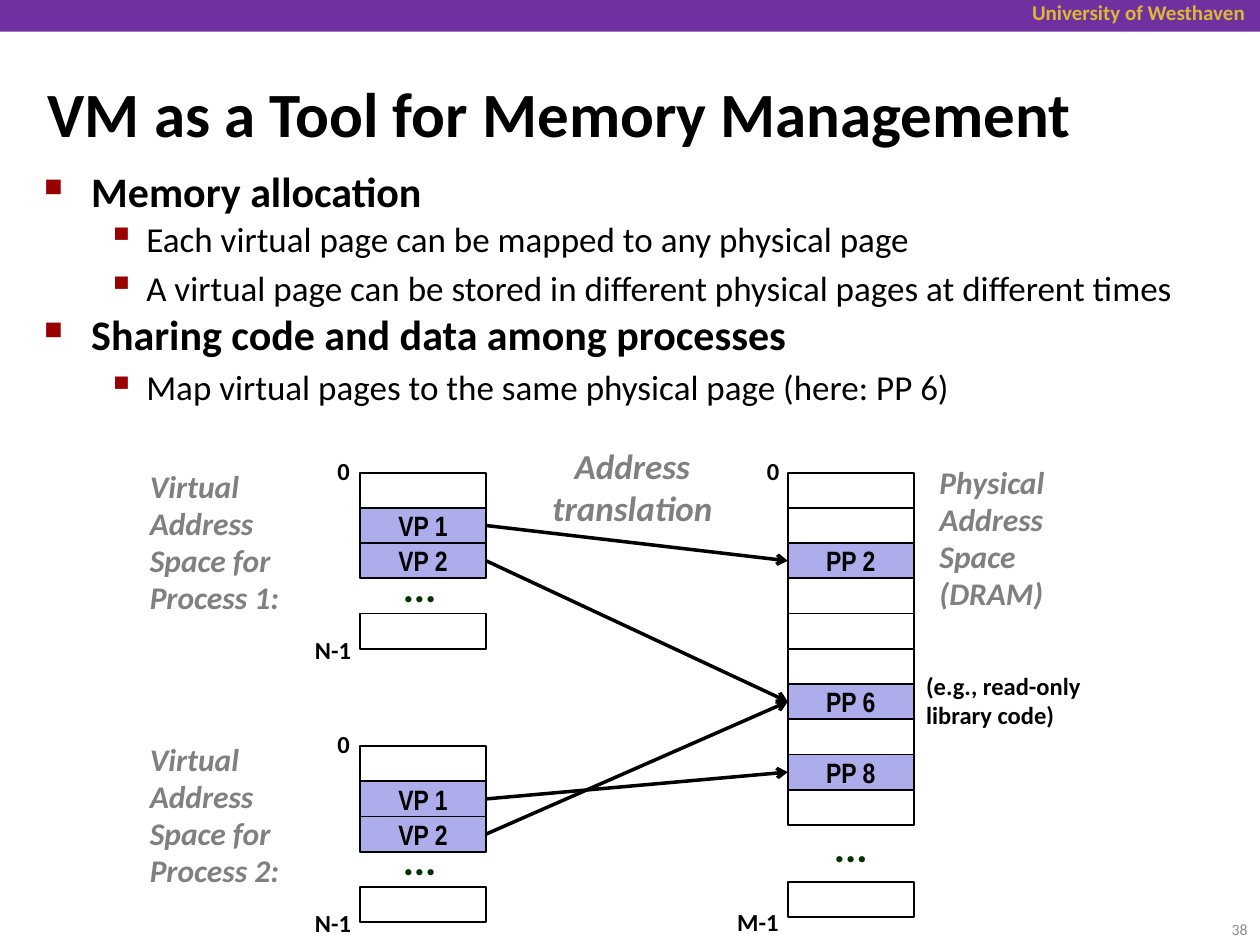
import lxml.etree
import pptx
import pptx.dml.color
import pptx.enum.shapes
import pptx.enum.text
import pptx.oxml.ns
import pptx.util

Cm = pptx.util.Cm
Pt = pptx.util.Pt
qn = pptx.oxml.ns.qn
ALIGN = pptx.enum.text.PP_ALIGN
RECTANGLE = pptx.enum.shapes.MSO_SHAPE.RECTANGLE
MIDDLE = pptx.enum.text.MSO_ANCHOR.MIDDLE

COLORS = {
    name: pptx.dml.color.RGBColor.from_string(value)
    for name, value in {
        "purple": "7030A0", "gold": "DCB834", "black": "000000", "gray": "808080",
        "number": "8C8C8C", "page": "ADADEB", "dots": "003300",
    }.items()
}
BULLET_COLOR = "990000"

presentation = pptx.Presentation()
presentation.slide_width = Cm(25.4)
presentation.slide_height = Cm(19.05)
slide = presentation.slides.add_slide(presentation.slide_layouts[6])
shapes = slide.shapes


def add_text(left, top, width, height, lines, size, color="black", bold=True, italic=False,
             align=ALIGN.LEFT, spacing=None, before=0, wrap=True, anchor=None):
    text_frame = shapes.add_textbox(Cm(left), Cm(top), Cm(width), Cm(height)).text_frame
    text_frame.word_wrap = wrap
    text_frame.vertical_anchor = anchor
    for index, line in enumerate(lines):
        paragraph = text_frame.add_paragraph() if index else text_frame.paragraphs[0]
        paragraph.alignment = align
        paragraph.line_spacing = spacing
        paragraph.space_before = Pt(before)
        run = paragraph.add_run()
        run.text = line
        run.font.name = "Calibri"
        run.font.size = Pt(size)
        run.font.bold = bold
        run.font.italic = italic
        run.font.color.rgb = COLORS[color]
    return text_frame


def add_page(left, top, label):
    """Draw one memory page; a page with a label is filled."""
    page = shapes.add_shape(RECTANGLE, Cm(left), Cm(top), Cm(PAGE_WIDTH), Cm(PAGE_HEIGHT))
    page.shadow.inherit = False
    page.line.color.rgb = COLORS["black"]
    page.line.width = Pt(1)
    if not label:
        page.fill.background()
        return
    page.fill.solid()
    page.fill.fore_color.rgb = COLORS["page"]
    page.text_frame.vertical_anchor = MIDDLE
    paragraph = page.text_frame.paragraphs[0]
    paragraph.alignment = ALIGN.CENTER
    run = paragraph.add_run()
    run.text = label
    run.font.name = "Arial Narrow"
    run.font.size = Pt(16)
    run.font.bold = True
    run.font.color.rgb = COLORS["black"]


# Header and title
header = shapes.add_shape(RECTANGLE, 0, 0, presentation.slide_width, Cm(0.64))
header.shadow.inherit = False
header.fill.solid()
header.fill.fore_color.rgb = COLORS["purple"]
header.line.fill.background()
add_text(18.62, -0.13, 6.73, 0.76, ["University of Westhaven"], 12, "gold", align=ALIGN.RIGHT)
add_text(0.71, 1.47, 23.93, 1.6, ["VM as a Tool for Memory Management"], 36, anchor=MIDDLE)

# Bulleted list: level, line spacing, text
points = [
    (0, 0.83, "Memory allocation"),
    (1, 0.88, "Each virtual page can be mapped to any physical page"),
    (1, 1.0, "A virtual page can be stored in different physical pages at different times"),
    (0, 0.83, "Sharing code and data among processes"),
    (1, 1.0, "Map virtual pages to the same physical page (here: PP 6)"),
]
# Per level: text size, margin, hanging indent, bullet, bullet size in percent
levels = [(24, 0.95, 0.95, "■", 60), (20, 2.06, 0.79, "▪", 110)]
body = add_text(0.64, 3.38, 24.33, 5.28, [text for _, _, text in points], 24)
for paragraph, (level, spacing, _) in zip(body.paragraphs, points):
    size, margin, hanging, bullet, bullet_size = levels[level]
    paragraph.level = level
    paragraph.line_spacing = spacing
    paragraph.space_before = Pt(size * 0.2)
    paragraph.runs[0].font.size = Pt(size)
    paragraph.runs[0].font.bold = level == 0
    properties = paragraph._p.get_or_add_pPr()
    properties.set("marL", str(Cm(margin)))
    properties.set("indent", str(-Cm(hanging)))
    bullet_color = lxml.etree.SubElement(properties, qn("a:buClr"))
    lxml.etree.SubElement(bullet_color, qn("a:srgbClr"), val=BULLET_COLOR)
    lxml.etree.SubElement(properties, qn("a:buSzPct"), val=str(bullet_size * 1000))
    lxml.etree.SubElement(properties, qn("a:buChar"), char=bullet)

# Memory diagram
PAGE_WIDTH, PAGE_HEIGHT = 2.54, 0.71
VIRTUAL_LEFT, PHYSICAL_LEFT = 7.26, 15.88
PHYSICAL_TOP = 9.53
process_tops = [9.53, 15.04]
virtual_pages = {0: "", 1: "VP 1", 2: "VP 2", 4: ""}
physical_pages = {2: "PP 2", 6: "PP 6", 8: "PP 8"}
heading = {"size": 18, "color": "gray", "italic": True, "spacing": 0.98}
address = {"size": 14, "spacing": 0.98, "wrap": False}
dots = {"lines": ["..."], "size": 24, "color": "dots", "spacing": 0.88, "before": 9, "wrap": False}

for number, top in enumerate(process_tops, 1):
    add_text(2.77, top - 0.21, 3.81, 3.25,
             [f"Virtual Address Space for Process {number}:"], **heading)
    add_text(6.55, top - 0.43, 0.79, 0.84, ["0"], **address)
    add_text(6.1, top + 3.17, 1.24, 0.84, ["N-1"], **address)
    for row, label in virtual_pages.items():
        add_page(VIRTUAL_LEFT, top + row * PAGE_HEIGHT, label)
    add_text(7.87, top + 1.77, 1.19, 1.14, **dots)

for row in range(10):
    add_page(PHYSICAL_LEFT, PHYSICAL_TOP + row * PAGE_HEIGHT, physical_pages.get(row))
add_page(PHYSICAL_LEFT, 17.78, None)
add_text(16.56, 16.54, 1.19, 1.14, **dots)
add_text(15.21, 9.09, 0.79, 0.84, ["0"], **address)
add_text(14.61, 18.19, 1.35, 0.84, ["M-1"], **address)
add_text(18.69, 9.25, 2.97, 3.28, ["Physical", "Address", "Space (DRAM)"], **heading)
add_text(18.42, 13.44, 4.04, 1.42, ["(e.g., read-only", "library code)"], 14, spacing=0.98)

# Mappings: process, virtual row, physical row
for process, virtual_row, physical_row in [(0, 1, 2), (0, 2, 6), (1, 2, 6), (1, 1, 8)]:
    arrow = shapes.add_connector(
        pptx.enum.shapes.MSO_CONNECTOR.STRAIGHT,
        Cm(VIRTUAL_LEFT + PAGE_WIDTH),
        Cm(process_tops[process] + (virtual_row + 0.5) * PAGE_HEIGHT),
        Cm(PHYSICAL_LEFT),
        Cm(PHYSICAL_TOP + (physical_row + 0.5) * PAGE_HEIGHT),
    )
    arrow.line.color.rgb = COLORS["black"]
    arrow.line.width = Pt(2)
    lxml.etree.SubElement(arrow.line._get_or_add_ln(), qn("a:tailEnd"), type="arrow")
    lxml.etree.SubElement(arrow._element.spPr, qn("a:effectLst"))

add_text(10.87, 8.84, 3.76, 1.96, ["Address", "translation"], 20, "gray",
         italic=True, align=ALIGN.CENTER, wrap=False)
add_text(23.7, 18.44, 1.7, 0.6, ["38"], 9, "number", bold=False, align=ALIGN.RIGHT, anchor=MIDDLE)

presentation.save("out.pptx")
